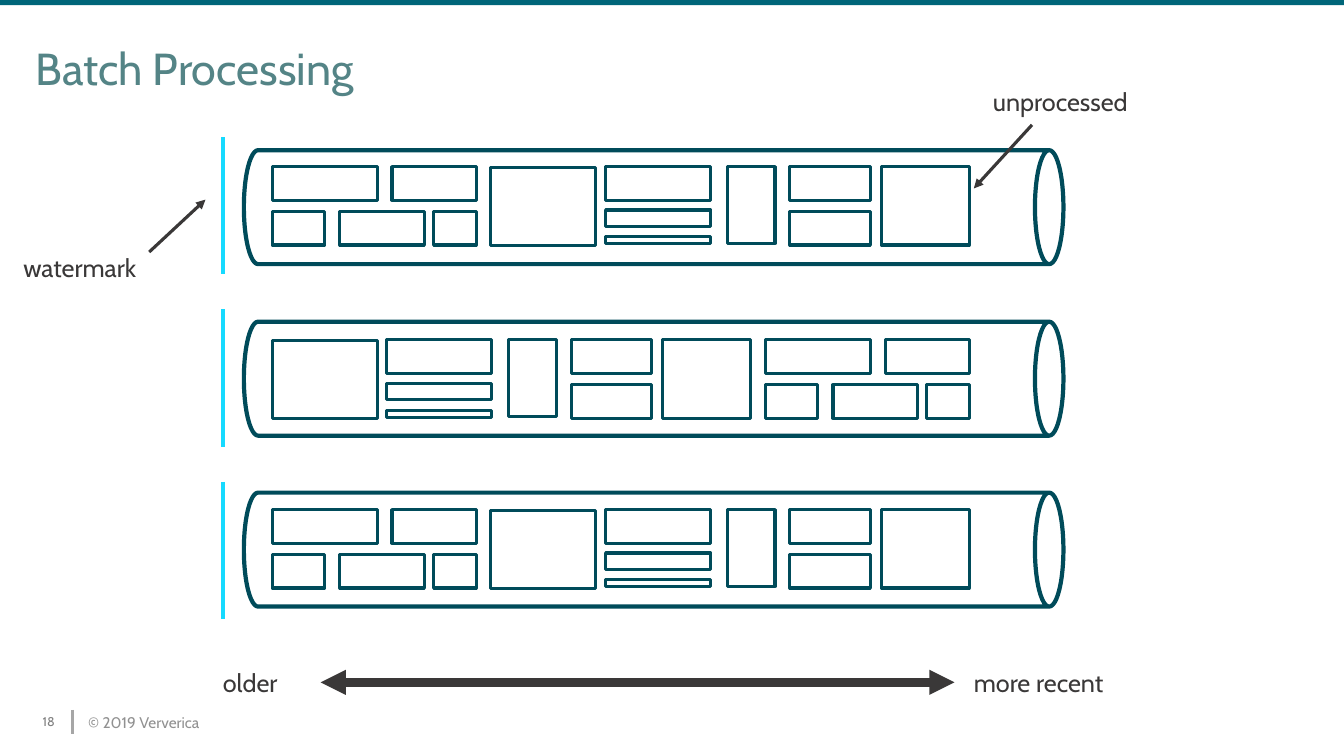
import pptx
import pptx.util
import pptx.dml.color
import pptx.enum.shapes
import pptx.enum.text
import pptx.oxml.ns
from dataclasses import dataclass
from lxml import etree

Pt = pptx.util.Pt
SHAPE = pptx.enum.shapes.MSO_SHAPE
ALIGN = pptx.enum.text.PP_ALIGN
ANCHOR = pptx.enum.text.MSO_ANCHOR
FIT = pptx.enum.text.MSO_AUTO_SIZE
qn = pptx.oxml.ns.qn


@dataclass(frozen=True)
class Theme:
    font: str = "Cabin"
    bar: str = "006679"
    title: str = "548486"
    pipe: str = "004B5A"
    watermark: str = "16DAFF"
    dark: str = "3A3838"
    copyright: str = "919191"
    divider: str = "A6A6A6"
    number: str = "808080"
    title_size: float = 32
    label_size: float = 18
    copyright_size: float = 11
    number_size: float = 9


def rgb(color):
    return pptx.dml.color.RGBColor.from_string(color)


class Deck:
    def __init__(self, theme):
        self.theme = theme
        self.prs = pptx.Presentation()
        self.prs.slide_width, self.prs.slide_height = Pt(960), Pt(540)
        self.s = self.prs.slides.add_slide(self.prs.slide_layouts[5])

    def fill_text(self, sp, text, size, color, align=ALIGN.LEFT, anchor=ANCHOR.TOP, wrap=True):
        tf = sp.text_frame
        tf.margin_left = tf.margin_top = tf.margin_right = tf.margin_bottom = 0
        tf.word_wrap, tf.vertical_anchor = wrap, anchor
        tf.auto_size = FIT.SHAPE_TO_FIT_TEXT
        p = tf.paragraphs[0]
        p.alignment = align
        r = p.add_run()
        r.text = text
        r.font.name, r.font.size = self.theme.font, Pt(size)
        r.font.color.rgb = rgb(color)

    def title(self, text, x, y, w, h):
        sp = self.s.shapes.title
        sp.left, sp.top, sp.width, sp.height = Pt(x), Pt(y), Pt(w), Pt(h)
        self.fill_text(sp, text, self.theme.title_size, self.theme.title)

    def text(self, text, x, y, w, h, size, color, **layout):
        sp = self.s.shapes.add_textbox(Pt(x), Pt(y), Pt(w), Pt(h))
        self.fill_text(sp, text, size, color, **layout)

    def label(self, text, x, y, w, wrap=True):
        self.text(text, x, y, w, 21.6, self.theme.label_size, self.theme.dark, wrap=wrap)

    def shape(self, kind, x, y, w, h, fill=None, line=None, weight=0):
        sp = self.s.shapes.add_shape(kind, Pt(x), Pt(y), Pt(w), Pt(h))
        sp.shadow.inherit = False
        if fill:
            sp.fill.solid()
            sp.fill.fore_color.rgb = rgb(fill)
        else:
            sp.fill.background()
        if line:
            sp.line.color.rgb, sp.line.width = rgb(line), Pt(weight)
        else:
            sp.line.fill.background()
        return sp

    def line(self, x1, y1, x2, y2, color, weight, arrows=()):
        """Draw a straight line; arrows names its arrow ends, headEnd before tailEnd."""
        sp = self.s.shapes.add_connector(
            pptx.enum.shapes.MSO_CONNECTOR.STRAIGHT, Pt(x1), Pt(y1), Pt(x2), Pt(y2))
        sp.line.color.rgb, sp.line.width = rgb(color), Pt(weight)
        properties = sp.element.spPr
        for end in arrows:
            etree.SubElement(properties.get_or_add_ln(), qn(f"a:{end}"), type="triangle")
        etree.SubElement(properties, qn("a:effectLst"))

    def pipe(self, center_y):
        """Lay a can on its side, with the lid to the right."""
        length, thickness, center_x = 585.4, 81.4, 466.9
        sp = self.shape(SHAPE.CAN, center_x - thickness / 2, center_y - length / 2,
                        thickness, length, line=self.theme.pipe, weight=3)
        sp.rotation = 90

    def blocks(self, x, y, group):
        for dx, dy, w, h in group:
            self.shape(SHAPE.RECTANGLE, x + dx, y + dy, w, h,
                       line=self.theme.pipe, weight=2.25)


# Blocks as (x, y, width, height) from the left top of their group
BRICKS = [(0, 0, 75, 24), (85.6, 0, 60.4, 24),
          (0, 32, 37.6, 24), (48.4, 32, 60.4, 24), (115.4, 32, 30.4, 24)]
TRAIN = [(0, 0.4, 75, 56),
         (82, 0, 75, 24), (82, 31, 75, 11.6), (82, 50.2, 75, 5),
         (169, 0, 34, 55),
         (213.6, 0, 57.6, 24), (213.6, 32, 57.6, 24),
         (279, 0, 62.8, 56)]

# Pipe center, watermark top, blocks top, bricks left, train left
ROWS = [(148, 98, 119, 194.4, 350.6),
        (270.5, 221, 242.8, 546.6, 194.4),
        (392.6, 344.2, 364, 194.4, 350.6)]


def main():
    theme = Theme()
    deck = Deck(theme)
    deck.shape(SHAPE.RECTANGLE, 0, 0, 960, 3.6, fill=theme.bar)
    deck.text("© 2019 Ververica", 62, 509, 81.4, 13.6, theme.copyright_size, theme.copyright,
              align=ALIGN.CENTER, anchor=ANCHOR.MIDDLE, wrap=False)
    deck.line(51.8, 507, 51.8, 524.2, theme.divider, 1.5)
    deck.text("18", 26.6, 509.8, 16.6, 10.8, theme.number_size, theme.number,
              align=ALIGN.CENTER, anchor=ANCHOR.MIDDLE)
    deck.title("Batch Processing", 25.2, 28.8, 908.6, 38.9)

    for pipe_y, mark_y, blocks_y, bricks_x, train_x in ROWS:
        deck.pipe(pipe_y)
        deck.blocks(bricks_x, blocks_y, BRICKS)
        deck.blocks(train_x, blocks_y, TRAIN)
        deck.line(159.2, mark_y, 159.2, mark_y + 98, theme.watermark, 3)

    deck.line(229, 487.4, 681.8, 487.4, theme.dark, 6, ("headEnd", "tailEnd"))
    deck.label("older", 159.2, 476.6, 40.4, wrap=False)
    deck.label("more recent", 695.6, 476.6, 95, wrap=False)
    deck.label("watermark", 16.6, 180, 102.2)
    deck.line(106.6, 180, 146.8, 142.6, theme.dark, 2.25, ("tailEnd",))
    deck.label("unprocessed", 709.2, 62, 102.2)
    deck.line(737.2, 89.2, 695.6, 134.6, theme.dark, 2.25, ("tailEnd",))
    deck.prs.save("out.pptx")


if __name__ == "__main__":
    main()
